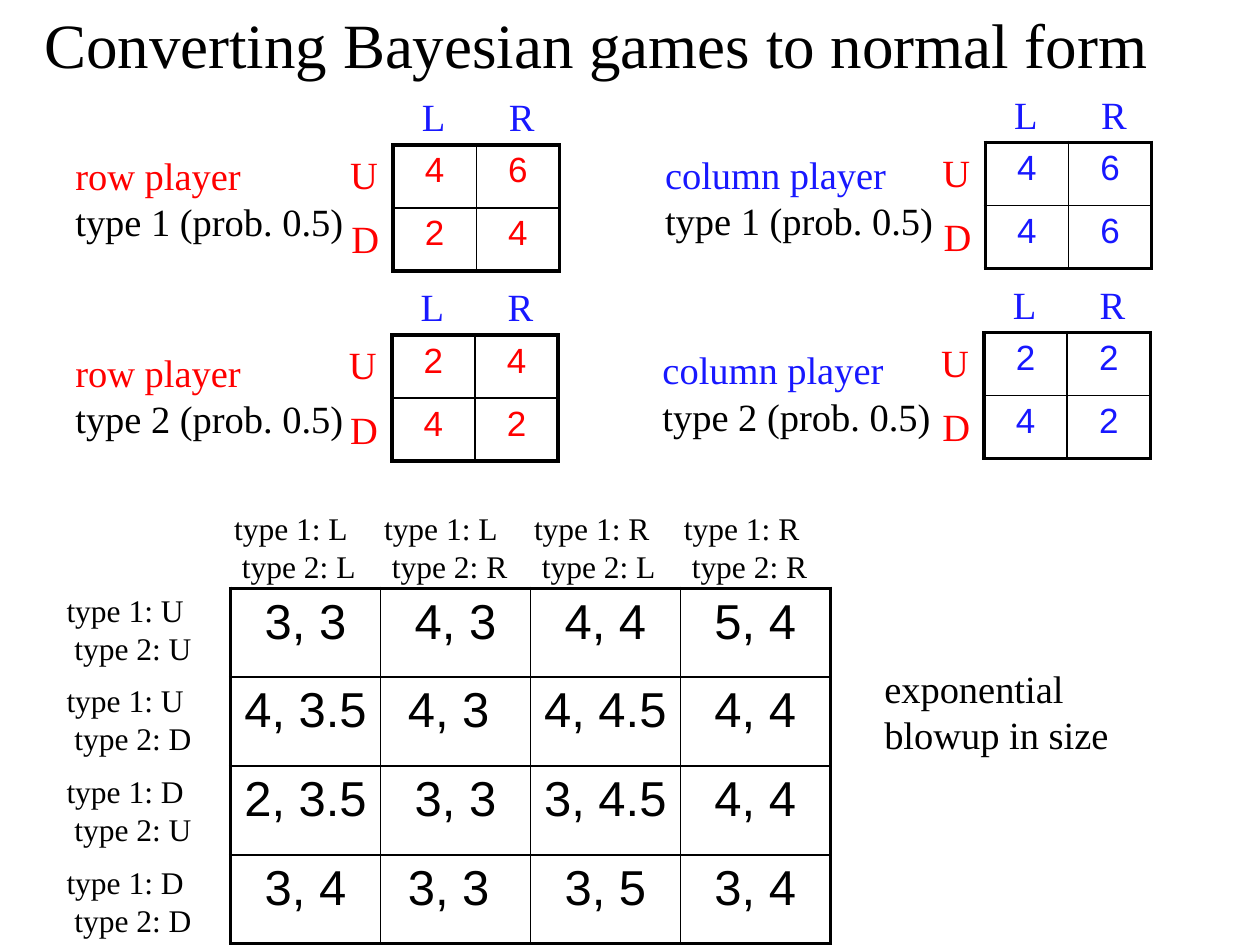
from lxml import etree
from pptx import Presentation
from pptx.dml.color import RGBColor
from pptx.enum.text import MSO_ANCHOR, MSO_AUTO_SIZE, PP_ALIGN
from pptx.oxml.ns import qn
from pptx.util import Inches, Pt

LEFT, CENTER = PP_ALIGN.LEFT, PP_ALIGN.CENTER
MIDDLE = MSO_ANCHOR.MIDDLE
GROW = MSO_AUTO_SIZE.SHAPE_TO_FIT_TEXT

COLORS = {"text": "000000", "row": "FF0000", "column": "1818FF"}
SERIF, SANS = "Times New Roman", "Arial"
OUTER, INNER = 2.25, 1

TITLE = "Converting Bayesian games to normal form"
REMARK = "exponential blowup in size"

# player, type, label corner, matrix corner, payoffs
GAMES = [
    ("row", 1, (0.5, 1.16), (3.12, 1.15), [["4", "6"], ["2", "4"]]),
    ("row", 2, (0.5, 2.72), (3.11, 2.66), [["2", "4"], ["4", "2"]]),
    ("column", 1, (5.18, 1.15), (7.82, 1.13), [["4", "6"], ["4", "6"]]),
    ("column", 2, (5.16, 2.7), (7.81, 2.64), [["2", "2"], ["4", "2"]]),
]
GAME_CELL = (0.66, 0.5)
# action, player, offset from the matrix corner, width
ACTIONS = [
    ("U", "row", (-0.44, 0), 0.42),
    ("D", "row", (-0.43, 0.51), 0.42),
    ("L", "column", (0.13, -0.46), 0.39),
    ("R", "column", (0.82, -0.46), 0.4),
]

NORMAL_FORM = [
    ["3, 3", "4, 3", "4, 4", "5, 4"],
    ["4, 3.5", "4, 3 ", "4, 4.5", "4, 4"],
    ["2, 3.5", "3, 3", "3, 4.5", "4, 4"],
    ["3, 4", "3, 3 ", "3, 5", "3, 4"],
]
NORMAL_CORNER, NORMAL_CELL = (1.83, 4.67), (1.19, 0.705)
ROW_STRATEGIES = ["UU", "UD", "DU", "DD"]
COLUMN_STRATEGIES = ["LL", "LR", "RL", "RR"]


def style(paragraph, size, color, font=SERIF, align=LEFT):
    paragraph.alignment = align
    paragraph.font.size = Pt(size)
    paragraph.font.name = font
    paragraph.font.color.rgb = RGBColor.from_string(COLORS[color])


def add_label(slide, lines, corner, size, width, height, wrap=False):
    """Add a text box; lines holds (text, color) pairs, one per paragraph."""
    box = slide.shapes.add_textbox(*map(Inches, (*corner, width, height)))
    frame = box.text_frame
    frame.word_wrap = wrap
    frame.auto_size = GROW
    frame.text = "\n".join(text for text, _ in lines)
    for paragraph, (_, color) in zip(frame.paragraphs, lines):
        style(paragraph, size, color)


def set_border(cell, side, width):
    line = etree.SubElement(cell._tc.get_or_add_tcPr(), qn(f"a:{side}"), w=str(Pt(width)))
    fill = etree.SubElement(line, qn("a:solidFill"))
    etree.SubElement(fill, qn("a:srgbClr"), val=COLORS["text"])


def add_matrix(slide, payoffs, corner, cell_size, size, color):
    rows, columns = len(payoffs), len(payoffs[0])
    width, height = cell_size
    table = slide.shapes.add_table(
        rows, columns, *map(Inches, (*corner, columns * width, rows * height))
    ).table
    table.first_row = table.horz_banding = False
    for column in table.columns:
        column.width = Inches(width)
    for r, row in enumerate(payoffs):
        table.rows[r].height = Inches(height)
        for c, payoff in enumerate(row):
            cell = table.cell(r, c)
            cell.text = payoff
            style(cell.text_frame.paragraphs[0], size, color, SANS, CENTER)
            edges = {"lnL": c == 0, "lnR": c == columns - 1,
                     "lnT": r == 0, "lnB": r == rows - 1}
            for side, is_outer in edges.items():
                set_border(cell, side, OUTER if is_outer else INNER)
            cell.fill.background()


def add_strategy(slide, strategy, corner):
    first, second = strategy
    lines = [(f"type 1: {first}", "text"), (f" type 2: {second}", "text")]
    add_label(slide, lines, corner, 18, 1.34, 0.7)


def main():
    deck = Presentation()
    deck.slide_width, deck.slide_height = Inches(10), Inches(7.5)
    slide = deck.slides.add_slide(deck.slide_layouts[5])

    title = slide.shapes.title
    title.left, title.top, title.width, title.height = map(Inches, (0.25, -0.07, 10, 0.82))
    title.text_frame.text = TITLE
    title.text_frame.vertical_anchor = MIDDLE
    style(title.text_frame.paragraphs[0], 36, "text")

    for player, kind, label_corner, (left, top), payoffs in GAMES:
        add_matrix(slide, payoffs, (left, top), GAME_CELL, 20, player)
        for action, owner, (dx, dy), width in ACTIONS:
            add_label(slide, [(action, owner)], (left + dx, top + dy), 22, width, 0.47)
        lines = [(f"{player} player", player), (f"type {kind} (prob. 0.5)", "text")]
        add_label(slide, lines, label_corner, 22, 2.33, 0.83)

    add_matrix(slide, NORMAL_FORM, NORMAL_CORNER, NORMAL_CELL, 28, "text")
    for i, strategy in enumerate(ROW_STRATEGIES):
        add_strategy(slide, strategy, (0.43, 4.64 + 0.72 * i))
    for i, strategy in enumerate(COLUMN_STRATEGIES):
        add_strategy(slide, strategy, (1.76 + NORMAL_CELL[0] * i, 3.99))
    add_label(slide, [(REMARK, "text")], (6.92, 5.23), 22, 2.34, 0.83, wrap=True)

    deck.save("out.pptx")


if __name__ == "__main__":
    main()
